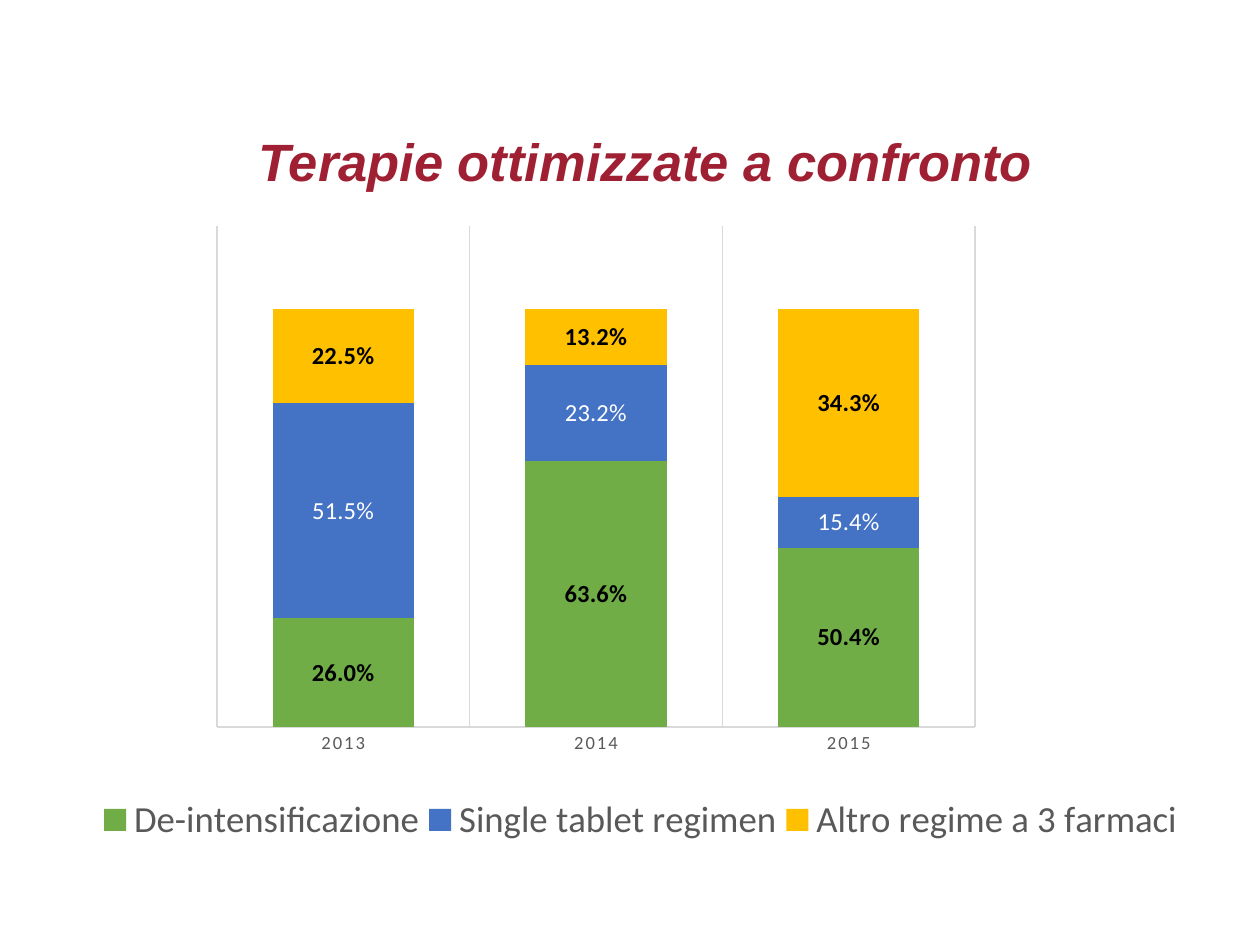
"""Build a slide that compares optimised therapies in a stacked column chart."""
from lxml import etree
from pptx import Presentation
from pptx.chart.data import CategoryChartData
from pptx.dml.color import RGBColor
from pptx.enum.chart import XL_CHART_TYPE, XL_LABEL_POSITION, XL_LEGEND_POSITION, XL_TICK_MARK
from pptx.enum.text import MSO_ANCHOR, PP_ALIGN
from pptx.oxml.ns import qn
from pptx.util import Inches, Pt

STACKED = XL_CHART_TYPE.COLUMN_STACKED
MIDDLE = XL_LABEL_POSITION.CENTER
ABOVE = XL_LEGEND_POSITION.TOP
NO_TICK = XL_TICK_MARK.NONE
TOP = MSO_ANCHOR.TOP
CENTER = PP_ALIGN.CENTER

THEME = {
    "title": "A02033", "grey": "595959", "rule": "D9D9D9",
    "black": "000000", "white": "FFFFFF",
    "green": "70AD47", "blue": "4472C4", "gold": "FFC000",
    "head": "Arial", "body": "Calibri",
    "title_size": 30, "legend_size": 21, "label_size": 14, "axis_size": 10.6,
}
SERIES = [
    ("De-intensificazione", (26, 63.6, 43), "50.4%", "green", "black", True),
    ("Single tablet regimen", (51.5, 23.2, 12), "15.4%", "blue", "white", False),
    ("Altro regime a 3 farmaci", (22.5, 13.2, 45), "34.3%", "gold", "black", True),
]


def style(font, size, color, bold=False, face="body"):
    font.name = THEME[face]
    font.size = Pt(THEME[size])
    font.bold = bold
    font.color.rgb = RGBColor.from_string(THEME[color])


def place(parent, index, inner, **box):
    for old in parent.findall(qn("c:layout")):
        parent.remove(old)
    layout = etree.Element(qn("c:layout"))
    parent.insert(index, layout)
    manual = etree.SubElement(layout, qn("c:manualLayout"))
    if inner:
        etree.SubElement(manual, qn("c:layoutTarget"), val="inner")
    for tag in ("xMode", "yMode"):
        etree.SubElement(manual, qn("c:" + tag), val="edge")
    for tag, share in box.items():
        etree.SubElement(manual, qn("c:" + tag), val=str(share))


deck = Presentation()
deck.slide_width, deck.slide_height = Inches(10), Inches(7.5)
slide = deck.slides.add_slide(deck.slide_layouts[6])

data = CategoryChartData(number_format='0.0"%"')
data.categories = ["2013", "2014", "2015"]
for name, values, *_ in SERIES:
    data.add_series(name, values)
chart = slide.shapes.add_chart(
    STACKED, Inches(0.66), Inches(1.63), Inches(8.85), Inches(5.45), data).chart
chart.has_title = False
chart.font.name = THEME["body"]
chart.font.size = Pt(10)

plot = chart.plots[0]
plot.gap_width, plot.overlap = 79, 100
plot.vary_by_categories = False
for series, (_, _, last, fill, ink, bold) in zip(plot.series, SERIES):
    series.format.fill.solid()
    series.format.fill.fore_color.rgb = RGBColor.from_string(THEME[fill])
    labels = series.data_labels
    labels.show_value = True
    labels.number_format = '0.0"%"'
    labels.number_format_is_linked = False
    labels.position = MIDDLE
    style(labels.font, "label_size", ink, bold)
    label = series.points[2].data_label
    run = label.text_frame.paragraphs[0].add_run()
    run.text = last
    style(run.font, "label_size", ink, bold)
    label.position = MIDDLE

years = chart.category_axis
years.major_tick_mark = years.minor_tick_mark = NO_TICK
years.has_major_gridlines = True
for line in (years.format.line, years.major_gridlines.format.line):
    line.color.rgb = RGBColor.from_string(THEME["rule"])
    line.width = Pt(0.75)
style(years.tick_labels.font, "axis_size", "grey")
for props in years._element.iter(qn("a:defRPr")):
    props.set("spc", "120")

scale = chart.value_axis
scale.minimum_scale, scale.maximum_scale = 0, 120
scale.has_major_gridlines = False
scale.visible = False

chart.has_legend = True
legend = chart.legend
legend.position = ABOVE
legend.include_in_layout = False
style(legend.font, "legend_size", "grey")
place(plot._element.getparent(), 0, True, x=0.12, y=0.03, w=0.68, h=0.73)
place(legend._element, 1, False, x=0.01, y=0.85, w=0.98, h=0.09)

title = slide.shapes.add_textbox(Inches(1.62), Inches(1.03), Inches(7.01), Inches(1.19))
frame = title.text_frame
frame.word_wrap = True
frame.vertical_anchor = TOP
para = frame.paragraphs[0]
para.text = "Terapie ottimizzate a confronto"
para.alignment = CENTER
para.line_spacing = 0.9
style(para.font, "title_size", "title", True, "head")
para.font.italic = True

deck.save("out.pptx")
